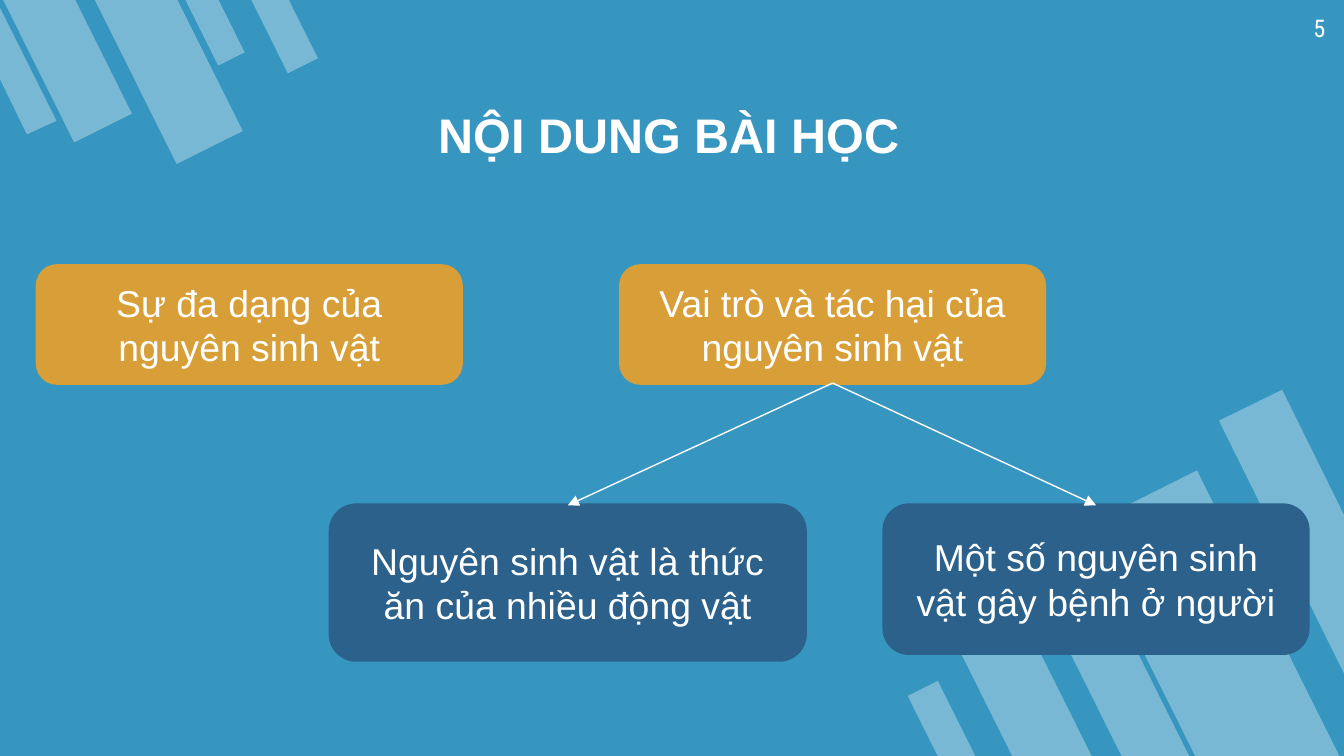
import dataclasses

import lxml.etree
import pptx
import pptx.dml.color
import pptx.enum.shapes
import pptx.enum.text
import pptx.oxml
import pptx.oxml.ns
import pptx.util

COLUMNS = 100  # square grid cells across the slide
STRIPE_RATIO = 2.49  # stripe length to width
SHAPES = pptx.enum.shapes.MSO_SHAPE
ALIGN = pptx.enum.text.PP_ALIGN
ANCHOR = pptx.enum.text.MSO_ANCHOR


@dataclasses.dataclass(frozen=True)
class Theme:
    background: str = "3796BF"
    white: str = "FFFFFF"
    topic: str = "D89F39"
    detail: str = "2B618B"
    stripe_alpha: int = 33
    font: str = "Arial"
    number_font: str = "Roboto Condensed"
    title_size: int = 26
    body_size: int = 20
    number_size: int = 13
    border: float = 2
    arrow: float = 0.75


THEME = Theme()


def color(value):
    return pptx.dml.color.RGBColor.from_string(value)


def cells(*lengths):
    """Turn grid cells into slide lengths; the slide is 10 inches wide."""
    return [pptx.util.Inches(length * 10 / COLUMNS) for length in lengths]


def set_all(target, values):
    for name, value in values.items():
        setattr(target, name, value)


def write(shape, text, size, font=THEME.font, bold=False,
          alignment=ALIGN.CENTER, anchor=ANCHOR.MIDDLE, inset=0.05):
    frame = shape.text_frame
    margin = pptx.util.Inches(inset)
    set_all(frame, {"text": text, "word_wrap": True, "vertical_anchor": anchor,
                    "auto_size": pptx.enum.text.MSO_AUTO_SIZE.NONE,
                    "margin_top": margin, "margin_bottom": margin})
    paragraph = frame.paragraphs[0]
    paragraph.alignment = alignment
    run = paragraph.runs[0]
    set_all(run.font, {"name": font, "size": pptx.util.Pt(size), "bold": bold})
    run.font.color.rgb = color(THEME.white)


def make_translucent(shape):
    shape.shadow.inherit = False
    shape.fill.solid()
    shape.fill.fore_color.rgb = color(THEME.white)
    shape.line.fill.background()
    solid = shape.fill._xPr.find(pptx.oxml.ns.qn("a:solidFill"))
    lxml.etree.SubElement(solid[0], pptx.oxml.ns.qn("a:alpha"),
                          val=str(THEME.stripe_alpha * 1000))


def add_stripes(slide, origin, rotation, stripes, cut_stripe):
    """Draw a corner cluster; the cut stripe ends at the slide's edge."""
    left, top = origin
    for column, row, width in stripes:
        shape = slide.shapes.add_shape(
            SHAPES.FLOWCHART_MANUAL_INPUT,
            *cells(left + column, top + row, width, width * STRIPE_RATIO))
        shape.rotation = rotation
        shape._element.spPr.xfrm.set("flipH", "1")
        make_translucent(shape)
    points = [cells(left + column, top + row) for column, row in cut_stripe]
    builder = slide.shapes.build_freeform(*points[0])
    builder.add_line_segments(points[1:], close=True)
    make_translucent(builder.convert_to_shape())


def add_heading(slide, title_box, number_box):
    title = slide.shapes.title
    set_all(title, dict(zip(("left", "top", "width", "height"), cells(*title_box))))
    write(title, "NỘI DUNG BÀI HỌC", THEME.title_size, bold=True)
    number = slide.shapes.add_textbox(*cells(*number_box))
    write(number, "5", THEME.number_size, THEME.number_font,
          alignment=ALIGN.RIGHT, anchor=ANCHOR.TOP, inset=0.1)


def add_card(slide, box, text, fill):
    card = slide.shapes.add_shape(SHAPES.ROUNDED_RECTANGLE, *cells(*box))
    card.shadow.inherit = False
    card.fill.solid()
    card.fill.fore_color.rgb = color(fill)
    card.line.color.rgb = color(fill)
    card.line.width = pptx.util.Pt(THEME.border)
    write(card, text, THEME.body_size)
    return card


def add_arrow(slide, parent, child):
    arrow = slide.shapes.add_connector(
        pptx.enum.shapes.MSO_CONNECTOR.STRAIGHT, 0, 0, 0, 0)
    arrow.begin_connect(parent, 2)
    arrow.end_connect(child, 0)
    arrow.line.color.rgb = color(THEME.white)
    arrow.line.width = pptx.util.Pt(THEME.arrow)
    lxml.etree.SubElement(arrow.line._get_or_add_ln(),
                          pptx.oxml.ns.qn("a:tailEnd"), type="triangle")
    lxml.etree.SubElement(arrow._element.spPr, pptx.oxml.ns.qn("a:effectLst"))


def add_topic_tree(slide, origin):
    """Two topics above; the second one branches into two details."""
    left, top = origin
    topics = [
        add_card(slide, (left + column, top, 31.5, 8.7), text, THEME.topic)
        for column, text in ((0, "Sự đa dạng của nguyên sinh vật"),
                             (43.4, "Vai trò và tác hại của nguyên sinh vật"))]
    details = (
        (21.8, 35.3, 11.5, "Nguyên sinh vật là thức ăn của nhiều động vật"),
        (63, 31.5, 11, "Một số nguyên sinh vật gây bệnh ở người"))
    for column, width, height, text in details:
        box = (left + column, top + 17.8, width, height)
        add_arrow(slide, topics[1], add_card(slide, box, text, THEME.detail))


def main():
    presentation = pptx.Presentation()
    presentation.slide_width = pptx.util.Inches(10)
    presentation.slide_height = presentation.slide_width * 9 // 16
    slide = presentation.slides.add_slide(presentation.slide_layouts[5])
    slide.background.fill.solid()
    slide.background.fill.fore_color.rgb = color(THEME.background)

    # Corner decoration: bottom right, then top left
    add_stripes(slide, (68.8, 29), 153.5,
                [(4.5, 16, 5.3), (16.5, 6.9, 9.6), (13, 17.8, 4.5), (0, 21.9, 2.5)],
                [(26.6, 0), (21.9, 2.3), (31.2, 21.1), (31.2, 9.3)])
    add_stripes(slide, (0, 0), 333.5,
                [(14.9, -0.8, 2.2), (2.6, -1.8, 4.8), (9.8, -2, 5.5), (19.9, -1, 2.5)],
                [(2, 10), (4.2, 9), (0, 0.6), (0, 5.9)])

    # Title, slide number and content
    add_heading(slide, (0, 7.3, 99.6, 5.4), (93.6, 0, 6, 4.3))
    add_topic_tree(slide, (2.8, 19.8))
    presentation.save("out.pptx")


if __name__ == "__main__":
    main()
